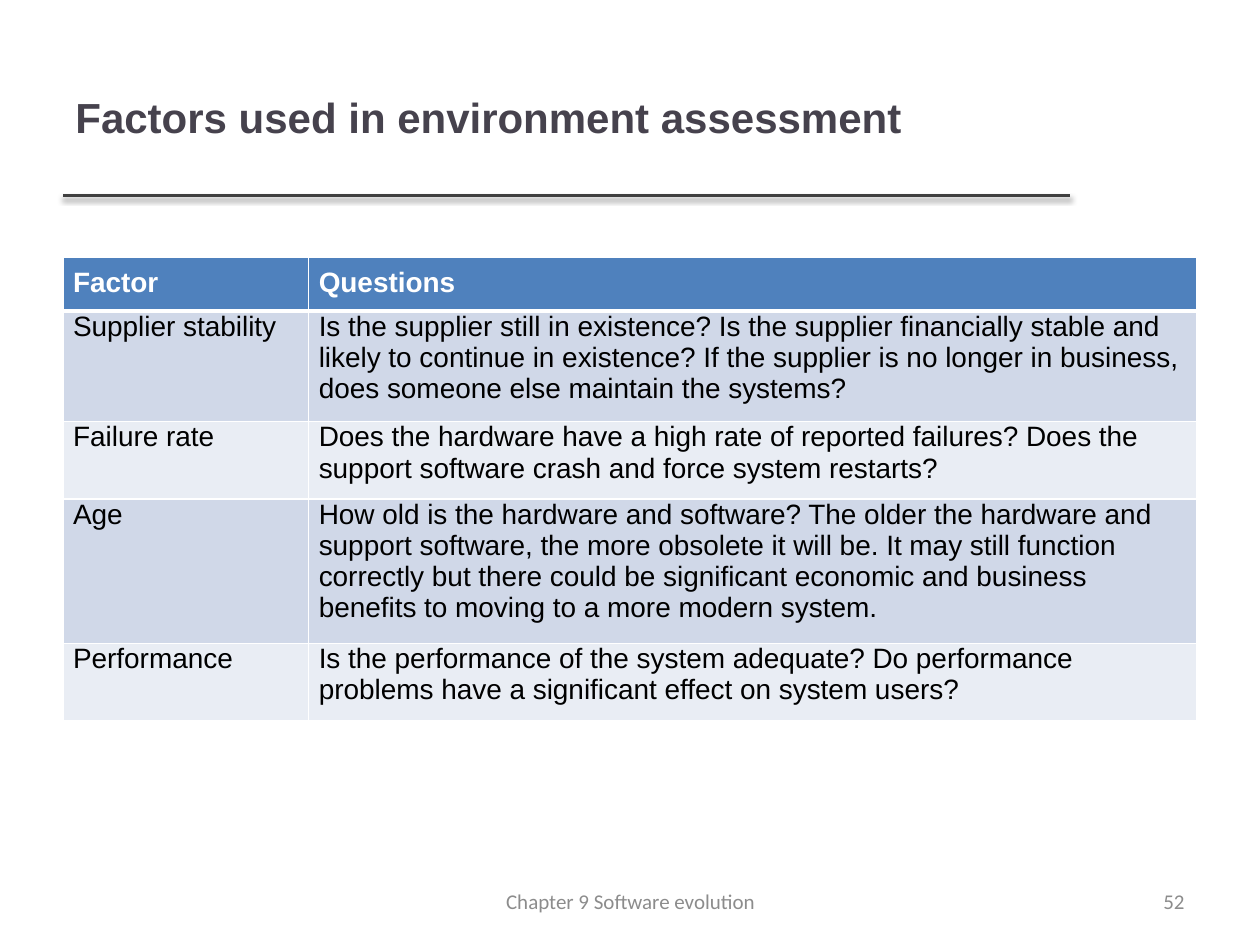
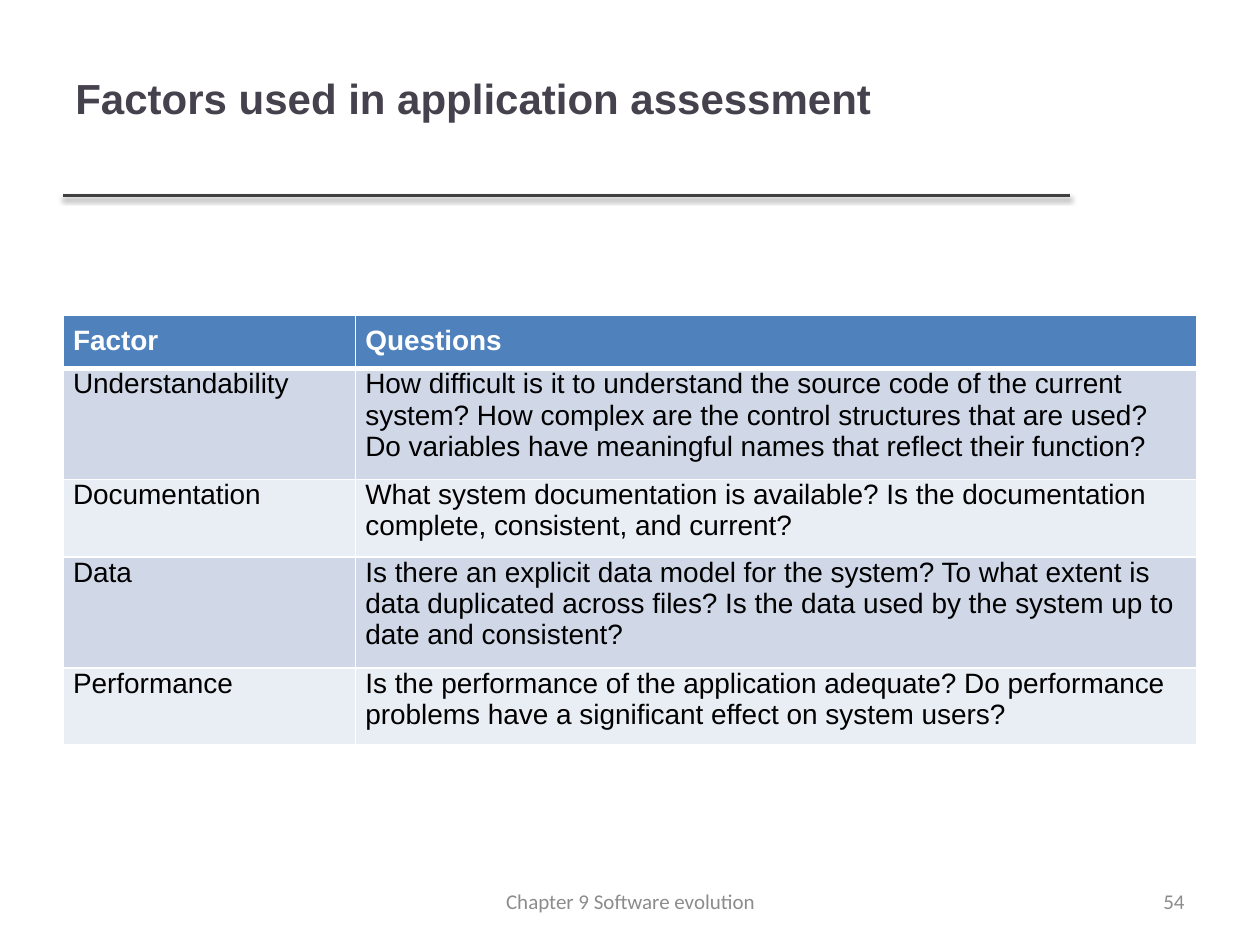
import pptx
import pptx.dml.color
import pptx.enum.shapes
import pptx.enum.text
import pptx.oxml
import pptx.oxml.ns
import pptx.util
from pptx.util import Inches

RGBColor = pptx.dml.color.RGBColor
Align = pptx.enum.text.PP_ALIGN
Anchor = pptx.enum.text.MSO_ANCHOR

TITLE_INK = RGBColor(0x46, 0x42, 0x4D)
RULE = RGBColor(0x40, 0x40, 0x40)
FOOTER_GREY = RGBColor(0x8C, 0x8C, 0x8C)
HEADER_BLUE = RGBColor(0x4F, 0x81, 0xBD)
BANDS = (RGBColor(0xD0, 0xD8, 0xE8), RGBColor(0xE9, 0xED, 0xF4))
WHITE = RGBColor(0xFF, 0xFF, 0xFF)
BLACK = RGBColor(0, 0, 0)

LEFT = 0.5
TABLE_WIDTH = 9
ROW_HEIGHT = 0.41
CELL_INSET = 0.08
NS = pptx.oxml.ns.nsdecls("a")
RULE_SHADOW = (
    f'<a:effectLst {NS}><a:outerShdw blurRad="40000" dist="20000" dir="5400000" '
    'rotWithShape="0"><a:srgbClr val="000000"><a:alpha val="38000"/></a:srgbClr>'
    '</a:outerShdw></a:effectLst>')

ENVIRONMENT_FACTORS = [
    ("Supplier stability",
     "Is the supplier still in existence? Is the supplier financially stable and "
     "likely to continue in existence? If the supplier is no longer in business, "
     "does someone else maintain the systems?"),
    ("Failure rate",
     "Does the hardware have a high rate of reported failures? Does the support "
     "software crash and force system restarts?"),
    ("Age",
     "How old is the hardware and software? The older the hardware and support "
     "software, the more obsolete it will be. It may still function correctly but "
     "there could be significant economic and business benefits to moving to a "
     "more modern system."),
    ("Performance",
     "Is the performance of the system adequate? Do performance problems have a "
     "significant effect on system users?"),
]
APPLICATION_FACTORS = [
    ("Understandability",
     "How difficult is it to understand the source code of the current system? "
     "How complex are the control structures that are used? Do variables have "
     "meaningful names that reflect their function?"),
    ("Documentation",
     "What system documentation is available? Is the documentation complete, "
     "consistent, and current?"),
    ("Data",
     "Is there an explicit data model for the system? To what extent is data "
     "duplicated across files? Is the data used by the system up to date and "
     "consistent?"),
    ("Performance",
     "Is the performance of the application adequate? Do performance problems "
     "have a significant effect on system users?"),
]


class Deck:
    """Holds the shared style and the slide being built."""

    def __init__(self):
        self.prs = pptx.Presentation()
        self.prs.slide_width = Inches(10)
        self.prs.slide_height = Inches(7.5)

    def add_slide(self, title, title_box, number):
        self.s = self.prs.slides.add_slide(self.prs.slide_layouts[6])
        self.rule()
        self.text(title, title_box, "Arial", 24, TITLE_INK, bold=True)
        self.text(str(number), (7.17, 6.95, 2.33, 0.4), "Calibri", 12,
                  FOOTER_GREY, Align.RIGHT)
        self.text("Chapter 9 Software evolution", (3.42, 6.95, 3.17, 0.4),
                  "Calibri", 12, FOOTER_GREY, Align.CENTER)

    def rule(self):
        line = self.s.shapes.add_connector(
            pptx.enum.shapes.MSO_CONNECTOR.STRAIGHT,
            Inches(LEFT), Inches(1.55), Inches(8.49), Inches(1.55))
        line.line.color.rgb = RULE
        line.line.width = pptx.util.Pt(2)
        line._element.spPr.append(pptx.oxml.parse_xml(RULE_SHADOW))

    def font(self, p, name, size, color, bold):
        font = p.runs[0].font
        font.name = name
        font.size = pptx.util.Pt(size)
        font.color.rgb = color
        font.bold = bold

    def text(self, text, box, name, size, color, align=Align.LEFT, bold=False):
        tf = self.s.shapes.add_textbox(*map(Inches, box)).text_frame
        tf.word_wrap = True
        tf.vertical_anchor = Anchor.MIDDLE
        p = tf.paragraphs[0]
        p.text = text
        p.alignment = align
        self.font(p, name, size, color, bold)

    def borders(self, cell, top, bottom):
        """Draw white cell borders; top and bottom widths are in points."""
        tcPr = cell._tc.get_or_add_tcPr()
        for side, width in (("L", 1), ("R", 1), ("T", top), ("B", bottom)):
            tcPr.append(pptx.oxml.parse_xml(
                f'<a:ln{side} {NS} w="{pptx.util.Pt(width)}"><a:solidFill>'
                f'<a:srgbClr val="{WHITE}"/></a:solidFill></a:ln{side}>'))

    def factor_table(self, top, factor_width, factors):
        rows = [("Factor", "Questions"), *factors]
        table = self.s.shapes.add_table(
            len(rows), 2, Inches(LEFT), Inches(top), Inches(TABLE_WIDTH),
            Inches(ROW_HEIGHT * len(rows))).table
        table.columns[0].width = Inches(factor_width)
        table.columns[1].width = Inches(TABLE_WIDTH - factor_width)
        for i, row in enumerate(rows):
            header = i == 0
            for j, text in enumerate(row):
                cell = table.cell(i, j)
                cell.margin_left = cell.margin_right = Inches(CELL_INSET)
                cell.margin_bottom = Inches(CELL_INSET)
                cell.margin_top = Inches(CELL_INSET if header else 0)
                self.borders(cell, 3 if i == 1 else 1, 3 if header else 1)
                cell.fill.solid()
                cell.fill.fore_color.rgb = HEADER_BLUE if header else BANDS[(i - 1) % 2]
                p = cell.text_frame.paragraphs[0]
                p.text = text
                p.space_after = pptx.util.Pt(6)
                self.font(p, "Arial", 16, WHITE if header else BLACK, header)


def main():
    deck = Deck()
    deck.add_slide("Factors used in environment assessment", (LEFT, 0.3, 7.98, 1.25), 52)
    deck.factor_table(2.04, 1.95, ENVIRONMENT_FACTORS)
    deck.add_slide("Factors used in application assessment", (LEFT, 0.15, 9, 1.25), 54)
    deck.factor_table(2.5, 2.32, APPLICATION_FACTORS)
    deck.prs.save("out.pptx")


if __name__ == "__main__":
    main()
